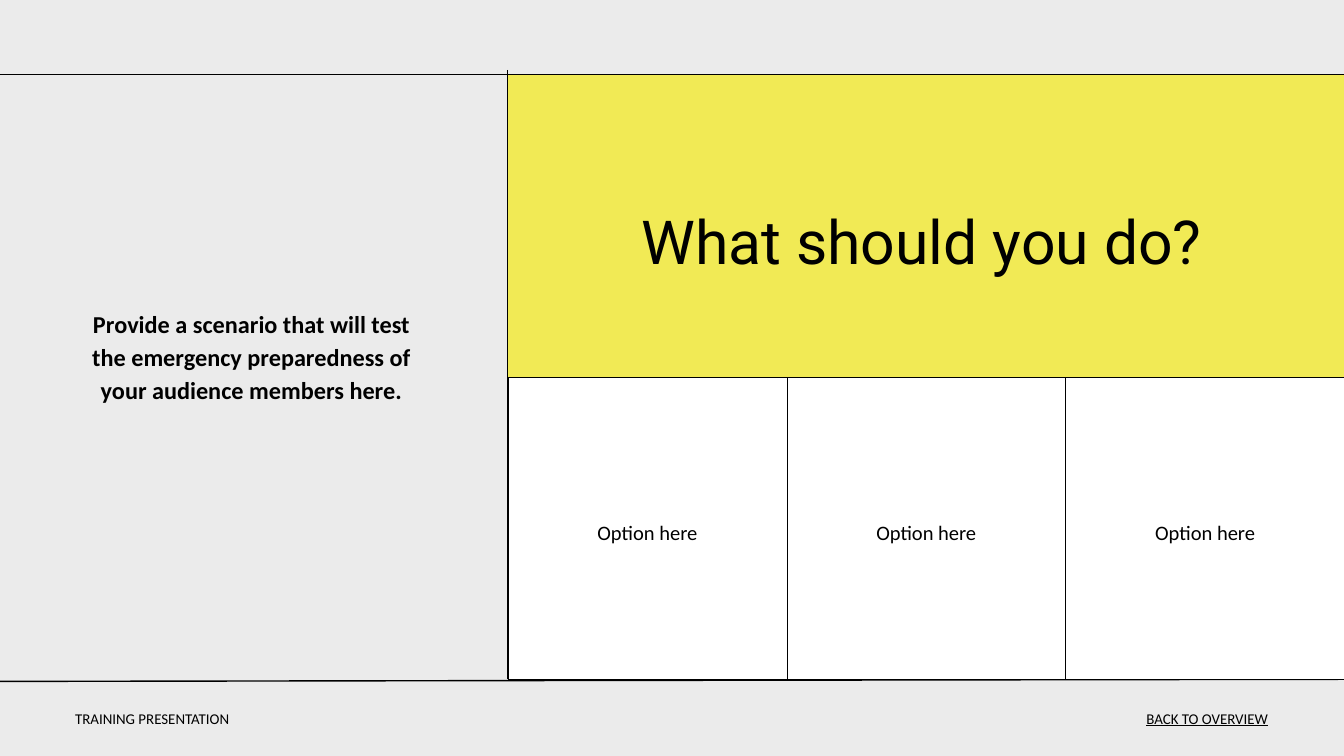
import pptx
import pptx.dml.color
import pptx.enum.shapes
import pptx.enum.text
import pptx.oxml
import pptx.oxml.ns
import pptx.util
from pptx.util import Cm, Pt

COLORS = {"background": "EBEBEB", "panel": "F1EA55", "cell": "FFFFFF", "ink": "000000"}
ALIGN = pptx.enum.text.PP_ALIGN
ANCHOR = pptx.enum.text.MSO_ANCHOR


def rgb(name):
    return pptx.dml.color.RGBColor.from_string(COLORS[name])


def write(tf, text, size, font="Calibri", align=ALIGN.LEFT, spacing=1.4,
          bold=False, underline=False, margin=0, anchor=ANCHOR.TOP):
    """Fill a text frame with one formatted paragraph."""
    tf.word_wrap = True
    tf.vertical_anchor = anchor
    tf.margin_left = tf.margin_right = tf.margin_top = tf.margin_bottom = margin
    p = tf.paragraphs[0]
    p.alignment = align
    p.line_spacing = spacing
    p.space_before = Pt(0)
    r = p.add_run()
    r.text = text
    r.font.name = font
    r.font.size = Pt(size)
    r.font.bold = bold
    r.font.underline = underline
    r.font.color.rgb = rgb("ink")


prs = pptx.Presentation()
prs.slide_width, prs.slide_height = Cm(50.8), Cm(28.58)
s = prs.slides.add_slide(prs.slide_layouts[5])
s.background.fill.solid()
s.background.fill.fore_color.rgb = rgb("background")

# Yellow panel
panel = s.shapes.add_shape(pptx.enum.shapes.MSO_SHAPE.RECTANGLE,
                           Cm(19.18), Cm(2.82), Cm(31.62), Cm(11.46))
panel.shadow.inherit = False
panel.fill.solid()
panel.fill.fore_color.rgb = rgb("panel")
panel.line.fill.background()

# Dividing lines: top, bottom, vertical
for x1, y1, x2, y2 in [(0, 2.82, 50.8, 2.82),
                       (0, 25.76, 50.8, 25.68),
                       (19.18, 2.64, 19.18, 25.68)]:
    line = s.shapes.add_connector(pptx.enum.shapes.MSO_CONNECTOR.STRAIGHT,
                                  Cm(x1), Cm(y1), Cm(x2), Cm(y2))
    line.line.color.rgb = rgb("ink")
    line.line.width = Pt(1.5)
    line.element.spPr.append(pptx.oxml.parse_xml(
        f'<a:effectLst {pptx.oxml.ns.nsdecls("a")}/>'))

# Title, moved in front of the panel
title = s.shapes.title
title.left, title.top, title.width, title.height = Cm(21.72), Cm(7.16), Cm(26.24), Cm(2.77)
write(title.text_frame, "What should you do?", 65, font="Roboto",
      align=ALIGN.CENTER, spacing=1.2)
title.text_frame.auto_size = pptx.enum.text.MSO_AUTO_SIZE.NONE
title.element.getparent().append(title.element)

# Footer and scenario
for left, top, width, height, text, style in [
    (40.34, 26.54, 7.59, 0.89, "BACK TO OVERVIEW",
     dict(size=16, align=ALIGN.RIGHT, underline=True)),
    (2.84, 26.54, 11.02, 0.89, "TRAINING PRESENTATION", dict(size=16)),
    (2.84, 11.51, 13.34, 4.95,
     "Provide a scenario that will test the emergency preparedness of your audience members here.",
     dict(size=26, align=ALIGN.CENTER, spacing=1.15, bold=True)),
]:
    box = s.shapes.add_textbox(Cm(left), Cm(top), Cm(width), Cm(height))
    write(box.text_frame, text, **style)

# Options table
options = ["Option here"] * 3
edges = [0.75, 0.75, 1.56, 0.75]  # widths of the vertical borders, left to right
table = s.shapes.add_table(1, len(options), Cm(19.2), Cm(14.28), Cm(31.62), Cm(11.4)).table
table.first_row = table.horz_banding = False
for i, option in enumerate(options):
    cell = table.cell(0, i)
    write(cell.text_frame, option, 22, align=ALIGN.CENTER)
    cell.vertical_anchor = ANCHOR.MIDDLE
    cell.margin_left = cell.margin_right = cell.margin_top = cell.margin_bottom = Cm(0.56)
    tcPr = cell._tc.get_or_add_tcPr()
    for side, width in zip("LRTB", [edges[i], edges[i + 1], 1.56, 0.75]):
        tcPr.append(pptx.oxml.parse_xml(
            f'<a:ln{side} {pptx.oxml.ns.nsdecls("a")} w="{Pt(width)}"><a:solidFill>'
            f'<a:srgbClr val="{COLORS["ink"]}"/></a:solidFill></a:ln{side}>'))
    cell.fill.solid()
    cell.fill.fore_color.rgb = rgb("cell")

prs.save("out.pptx")
